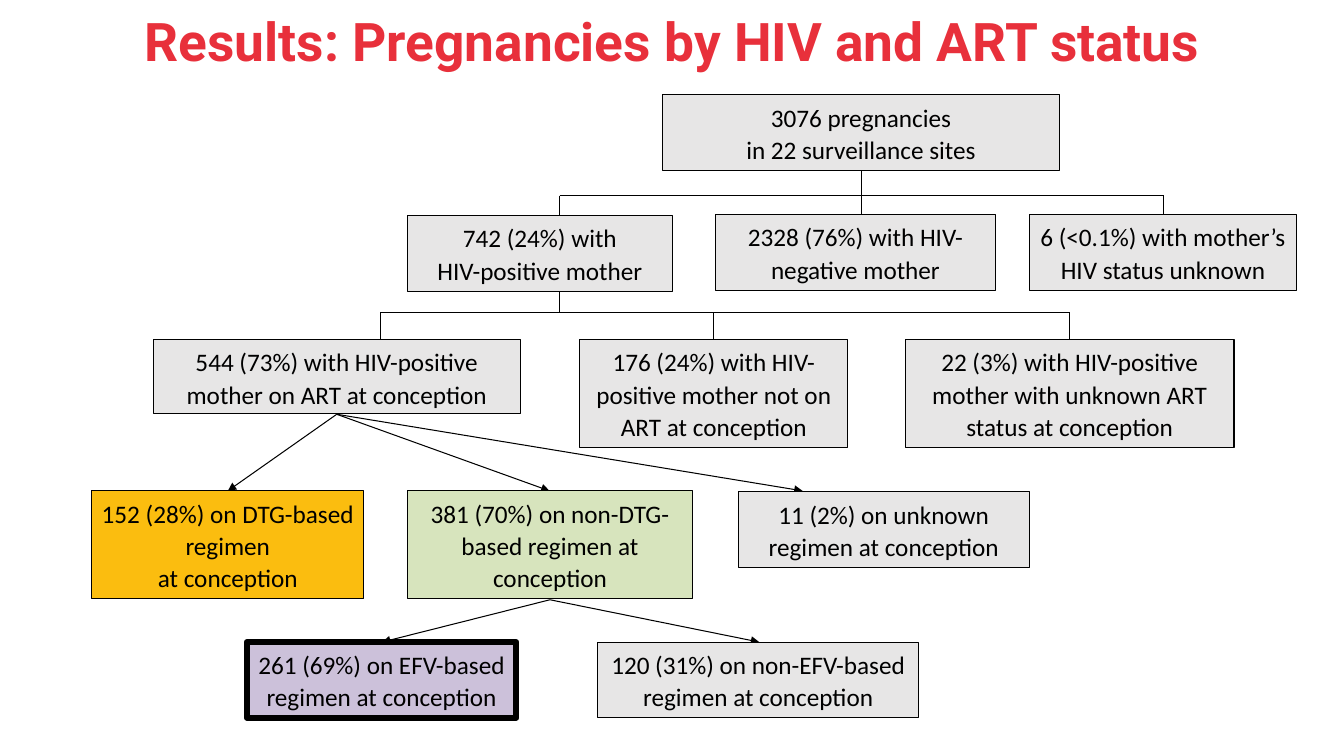
from lxml import etree
from pptx import Presentation
from pptx.dml.color import RGBColor
from pptx.enum.shapes import MSO_CONNECTOR as CONN, MSO_SHAPE as SHAPE
from pptx.enum.text import MSO_ANCHOR as ANCHOR, MSO_AUTO_SIZE as AUTO, PP_ALIGN as ALIGN
from pptx.oxml.ns import qn
from pptx.util import Inches, Pt

# Content
TITLE = "Results: Pregnancies by HIV and ART status"
COLORS = {"title": "E8303B", "black": "000000", "grey": "E7E6E6",
          "amber": "FBBD0F", "green": "D7E4BD", "purple": "CCC1DA"}

# name: (text, left, top, width, height, fill, line width in points)
BOXES = {
    "all": ("3076 pregnancies\nin 22 surveillance sites", 6.57, 0.94, 3.94, 0.75, "grey", 0.75),
    "positive": ("742 (24%) with\nHIV-positive mother", 4.04, 2.14, 2.63, 0.75, "grey", 0.75),
    "negative": ("2328 (76%) with HIV-negative mother", 7.1, 2.13, 2.77, 0.75, "grey", 0.75),
    "unknown": ("6 (<0.1%) with mother’s HIV status unknown", 10.21, 2.13, 2.65, 0.75, "grey", 0.75),
    "art": ("544 (73%) with HIV-positive mother on ART at conception",
            1.52, 3.37, 3.64, 0.73, "grey", 0.75),
    "no_art": ("176 (24%) with HIV-positive mother not on ART at conception",
               5.75, 3.37, 2.66, 1.07, "grey", 0.75),
    "art_unknown": ("22 (3%) with HIV-positive mother with unknown ART status at conception",
                    8.98, 3.37, 3.26, 1.07, "grey", 0.75),
    "dtg": ("152 (28%) on DTG-based regimen\nat conception", 0.91, 4.87, 2.7, 1.07, "amber", 0.75),
    "non_dtg": ("381 (70%) on non-DTG-based regimen at conception",
                4.04, 4.87, 2.83, 1.07, "green", 0.75),
    "regimen_unknown": ("11 (2%) on unknown regimen at conception",
                        7.32, 4.88, 2.89, 0.75, "grey", 0.75),
    "efv": ("261 (69%) on EFV-based regimen at conception", 2.45, 6.37, 2.67, 0.75, "purple", 4.5),
    "non_efv": ("120 (31%) on non-EFV-based regimen at conception",
                5.93, 6.37, 3.18, 0.75, "grey", 0.75),
}

# Square brackets: parent, trunk x, bar y, x of each drop, drop bottom
BRACKETS = [
    ("all", 8.54, 1.94, (5.55, 8.54, 11.54), 2.13),
    ("positive", 5.55, 3.1, (3.77, 7.08, 10.61), 3.37),
]
# Arrows: parent, arrow tips
ARROWS = [
    ("art", [(2.26, 4.87), (5.45, 4.87), (7.96, 4.87)]),
    ("non_dtg", [(3.79, 6.37), (7.53, 6.37)]),
]


def color(name):
    return RGBColor.from_string(COLORS[name])


def style_text(tf, font, size, name, bold=False):
    for p in tf.paragraphs:
        p.alignment = ALIGN.CENTER
        for r in p.runs:
            r.font.name, r.font.size, r.font.bold = font, Pt(size), bold
            r.font.color.rgb = color(name)


def add_box(slide, text, left, top, width, height, fill, weight):
    s = slide.shapes.add_shape(SHAPE.RECTANGLE, *map(Inches, (left, top, width, height)))
    s.shadow.inherit = False
    s.fill.solid()
    s.fill.fore_color.rgb = color(fill)
    s.line.color.rgb = color("black")
    s.line.width = Pt(weight)
    tf = s.text_frame
    tf.word_wrap = True
    tf.auto_size = AUTO.SHAPE_TO_FIT_TEXT
    tf.vertical_anchor = ANCHOR.TOP
    tf.text = text
    style_text(tf, "Calibri", 18, "black")
    for p in tf.paragraphs:
        p.line_spacing = 1.07


def add_line(slide, x1, y1, x2, y2, arrow=False):
    s = slide.shapes.add_connector(CONN.STRAIGHT, *map(Inches, (x1, y1, x2, y2)))
    s.line.color.rgb = color("black")
    s.line.width = Pt(0.75)
    if arrow:
        etree.SubElement(s.line._get_or_add_ln(), qn("a:tailEnd"), type="triangle")
    etree.SubElement(s._element.spPr, qn("a:effectLst"))


def bottom(name):
    _, _, top, _, height, _, _ = BOXES[name]
    return top + height


def main():
    prs = Presentation()
    prs.slide_width, prs.slide_height = Inches(13.33), Inches(7.5)
    slide = prs.slides.add_slide(prs.slide_layouts[5])

    # Title
    title = slide.shapes.title
    title.left, title.top, title.width, title.height = map(Inches, (-0.32, -0.05, 13.98, 0.9))
    title.text_frame.text = TITLE
    title.text_frame.vertical_anchor = ANCHOR.MIDDLE
    style_text(title.text_frame, "Roboto", 38, "title", bold=True)

    # Brackets
    for parent, trunk, bar, drops, end in BRACKETS:
        add_line(slide, trunk, bottom(parent), trunk, bar)
        add_line(slide, drops[0], bar, drops[-1], bar)
        for x in drops:
            add_line(slide, x, bar, x, end)

    # Arrows from the bottom centre of the parent
    for parent, tips in ARROWS:
        _, left, _, width, _, _, _ = BOXES[parent]
        for x, y in tips:
            add_line(slide, left + width / 2, bottom(parent) + 0.01, x, y, arrow=True)

    # Boxes
    for box in BOXES.values():
        add_box(slide, *box)

    prs.save("out.pptx")


if __name__ == "__main__":
    main()
